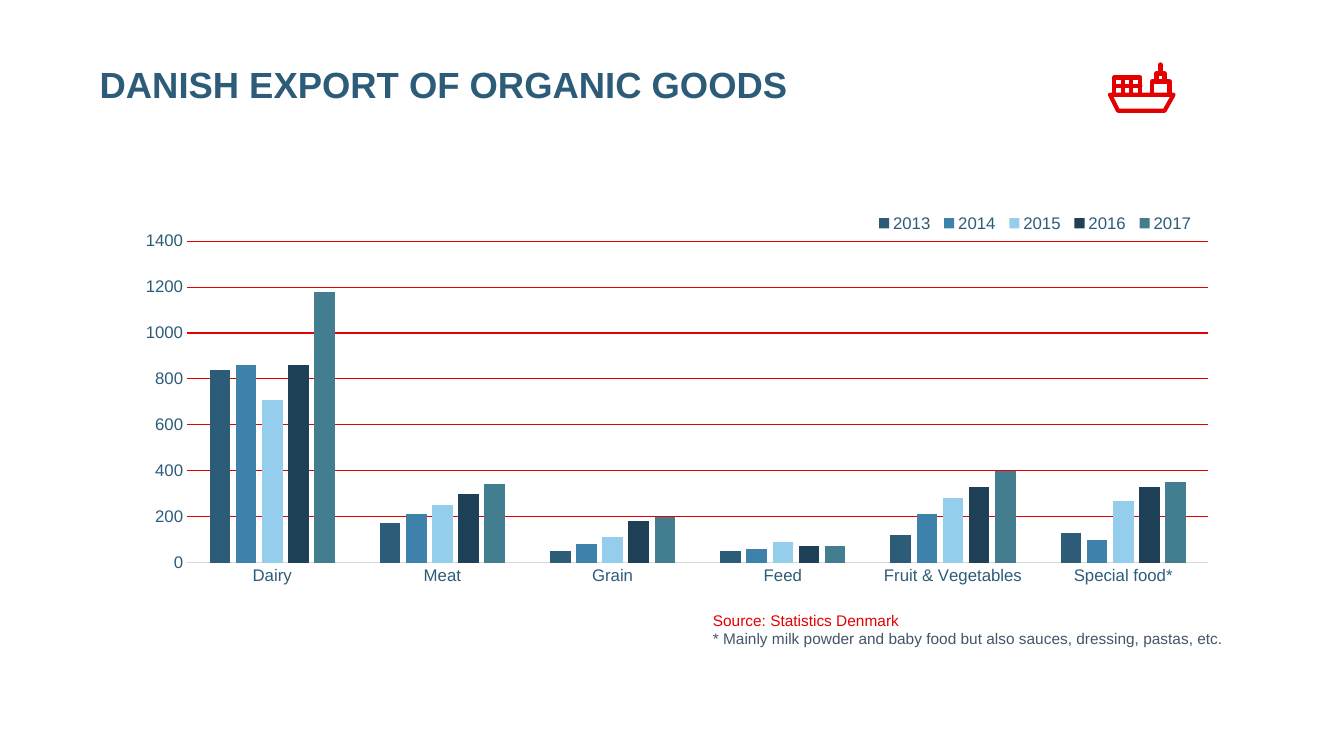
from dataclasses import dataclass

from lxml import etree
from pptx import Presentation
from pptx import util as u
from pptx.chart import data as chart_data
from pptx.dml.color import RGBColor
from pptx.enum import chart as chart_kinds, shapes, text
from pptx.oxml import ns, parse_xml

FONT = "Arial"
BLUE, RED, SLATE, GREY = "2D5C79", "E30000", "44546A", "D9D9D9"


@dataclass
class Year:
    name: str
    values: tuple[int, ...]
    color: str


@dataclass
class Line:
    wording: str
    size: int
    color: str
    bold: bool = False
    spacing: float = 1.0


@dataclass
class Stroke:
    points: tuple[tuple[float, float], ...]
    closed: bool = False


CATEGORIES = ("Dairy", "Meat", "Grain", "Feed", "Fruit & Vegetables", "Special food*")
YEARS = (
    Year("2013", (840, 170, 50, 50, 120, 130), BLUE),
    Year("2014", (860, 210, 80, 60, 210, 100), "3E82AC"),
    Year("2015", (710, 250, 110, 90, 280, 270), "95CEEC"),
    Year("2016", (860, 300, 180, 70, 330, 330), "1E4158"),
    Year("2017", (1180, 340, 200, 70, 400, 350), "427E90"),
)
TITLE = (Line("DANISH EXPORT OF ORGANIC GOODS", 26, BLUE, True, 0.9),)
NOTES = (
    Line("Source: Statistics Denmark", 11, RED),
    Line("* Mainly milk powder and baby food but also sauces, dressing, pastas, etc.", 11, SLATE),
)
SHIP = (
    Stroke(((11.01, 0.94), (11.64, 0.94), (11.55, 1.1), (11.09, 1.1)), True),  # hull
    Stroke(((11.05, 0.77), (11.31, 0.77), (11.31, 0.94), (11.05, 0.94)), True),  # containers
    Stroke(((11.14, 0.77), (11.14, 0.94))),
    Stroke(((11.22, 0.77), (11.22, 0.94))),
    Stroke(((11.05, 0.85), (11.31, 0.85))),
    Stroke(((11.43, 0.81), (11.6, 0.81), (11.6, 0.94), (11.43, 0.94)), True),  # cabin
    Stroke(((11.47, 0.81), (11.47, 0.73), (11.55, 0.73), (11.55, 0.81))),  # bridge
    Stroke(((11.51, 0.64), (11.51, 0.73))),  # mast
)


def rgb(value: str) -> RGBColor:
    return RGBColor.from_string(value)


def style_font(font, size: int, color: str, bold: bool = False) -> None:
    font.name, font.size, font.bold = FONT, u.Pt(size), bold
    font.color.rgb = rgb(color)


def style_line(line, color: str, width: float) -> None:
    line.color.rgb = rgb(color)
    line.width = u.Pt(width)


def add_text(page, left: float, top: float, width: float, height: float,
             inset: float, lines: tuple[Line, ...]) -> None:
    box = page.shapes.add_textbox(*map(u.Inches, (left, top, width, height)))
    frame = box.text_frame
    frame.word_wrap = True
    frame.vertical_anchor = text.MSO_ANCHOR.TOP
    frame.margin_left = frame.margin_right = u.Inches(inset)
    frame.margin_top = frame.margin_bottom = u.Inches(0.05)
    for index, line in enumerate(lines):
        para = frame.add_paragraph() if index else frame.paragraphs[0]
        para.text = line.wording
        para.line_spacing = line.spacing
        style_font(para.font, line.size, line.color, line.bold)


def manual_layout(x: float, y: float, width: float, height: float, inner: bool = False):
    """Return a c:layout element placed by fractions of the chart area."""
    target = '<c:layoutTarget val="inner"/>' if inner else ""
    return parse_xml(
        f'<c:layout {ns.nsdecls("c")}><c:manualLayout>{target}'
        '<c:xMode val="edge"/><c:yMode val="edge"/>'
        f'<c:x val="{x}"/><c:y val="{y}"/><c:w val="{width}"/><c:h val="{height}"/>'
        "</c:manualLayout></c:layout>")


def add_export_chart(page) -> None:
    data = chart_data.CategoryChartData(number_format="General")
    data.categories = CATEGORIES
    for year in YEARS:
        data.add_series(year.name, year.values)
    chart = page.shapes.add_chart(
        chart_kinds.XL_CHART_TYPE.COLUMN_CLUSTERED,
        *map(u.Inches, (0.89, 1.77, 11.23, 4.24)), data).chart
    chart.has_title = False
    style_font(chart.font, 10, "000000")

    plot = chart.plots[0]
    plot.gap_width, plot.overlap, plot.vary_by_categories = 219, -27, False
    for series, year in zip(plot.series, YEARS):
        series.format.fill.solid()
        series.format.fill.fore_color.rgb = rgb(year.color)

    values = chart.value_axis
    values.minimum_scale, values.maximum_scale, values.major_unit = 0, 1400, 200
    values.has_major_gridlines = True
    style_line(values.major_gridlines.format.line, RED, 0.75)
    values.format.line.fill.background()
    style_line(chart.category_axis.format.line, GREY, 0.75)
    for axis in (values, chart.category_axis):
        axis.major_tick_mark = axis.minor_tick_mark = chart_kinds.XL_TICK_MARK.NONE
        style_font(axis.tick_labels.font, 12, BLUE)

    chart.has_legend = True
    legend = chart.legend
    legend.position = chart_kinds.XL_LEGEND_POSITION.BOTTOM
    legend.include_in_layout = False
    style_font(legend.font, 12, BLUE)

    area = chart.element.find(".//" + ns.qn("c:plotArea"))
    for old in area.findall(ns.qn("c:layout")):
        area.remove(old)
    area.insert(0, manual_layout(0.086, 0.147, 0.902, 0.752, inner=True))
    key = chart.element.find(".//" + ns.qn("c:legend"))
    for old in key.findall(ns.qn("c:layout")):
        key.remove(old)
    key.find(ns.qn("c:legendPos")).addnext(manual_layout(0.69, 0.06, 0.29, 0.09))


def add_stroke(group, stroke: Stroke) -> None:
    points = [(u.Inches(x), u.Inches(y)) for x, y in stroke.points]
    if len(points) == 2:
        shape = group.shapes.add_connector(shapes.MSO_CONNECTOR.STRAIGHT, *points[0], *points[1])
    else:
        builder = group.shapes.build_freeform(*points[0])
        builder.add_line_segments(points[1:], close=stroke.closed)
        shape = builder.convert_to_shape()
        shape.fill.background()
    style_line(shape.line, RED, 3)
    outline = shape.line._get_or_add_ln()
    outline.set("cap", "rnd")
    etree.SubElement(outline, ns.qn("a:round"))
    etree.SubElement(shape.element.spPr, ns.qn("a:effectLst"))


def main() -> None:
    deck = Presentation()
    deck.slide_width, deck.slide_height = u.Inches(13.33), u.Inches(7.5)
    page = deck.slides.add_slide(deck.slide_layouts[6])
    add_text(page, 0.89, 0.62, 11.47, 1.17, 0.1, TITLE)
    add_export_chart(page)
    add_text(page, 7.02, 6.01, 5.65, 0.47, 0.05, NOTES)
    ship = page.shapes.add_group_shape()
    for stroke in SHIP:
        add_stroke(ship, stroke)
    deck.save("out.pptx")


if __name__ == "__main__":
    main()
